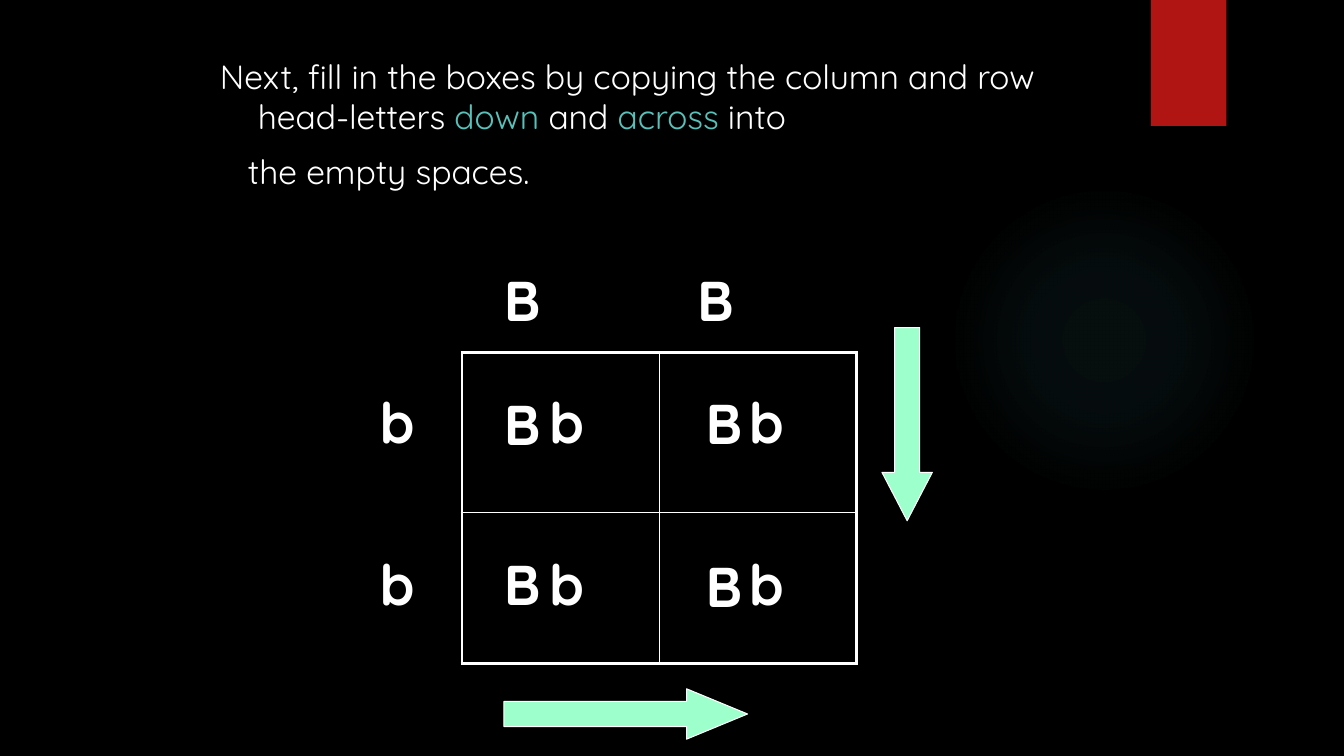
from lxml.etree import SubElement
from pptx import Presentation
from pptx.dml.color import RGBColor
from pptx.enum.shapes import MSO_SHAPE
from pptx.oxml import parse_xml
from pptx.oxml.ns import nsdecls, qn
from pptx.util import Pt

FONT = "Quicksand"
WHITE = "FFFFFF"
TEAL = "58C1BA"
MINT = "9DFFCB"
RED = "B01513"
GLOW = "50B9C1"
CAPITAL_TOPS = ((23, 22.3), (136.8, 138.2))


def color(value):
    return RGBColor.from_string(value)


def add_span(para, text, size, fill=WHITE, bold=False):
    span = para.add_run()
    span.text = text
    span.font.name = FONT
    span.font.size = Pt(size)
    span.font.bold = bold
    span.font.color.rgb = color(fill)


def add_box(page, left, top, width, height, inset=7.2):
    box = page.shapes.add_textbox(Pt(left), Pt(top), Pt(width), Pt(height))
    box.text_frame.word_wrap = True
    box.text_frame.margin_left = Pt(inset)
    return box.text_frame


def add_shape(page, kind, left, top, width, height, fill=None, line=None):
    shape = page.shapes.add_shape(kind, Pt(left), Pt(top), Pt(width), Pt(height))
    shape.shadow.inherit = False
    if fill:
        shape.fill.solid()
        shape.fill.fore_color.rgb = color(fill)
    if line:
        shape.line.color.rgb = color(line)
        shape.line.width = Pt(0.75)
    else:
        shape.line.fill.background()
    return shape


def add_glow(page, left, top, size):
    glow = add_shape(page, MSO_SHAPE.OVAL, left, top, size, size)
    glow.fill.background()
    stops = "".join(
        f'<a:gs pos="{place * 1000}"><a:srgbClr val="{GLOW}">'
        f'<a:alpha val="{alpha * 1000}"/></a:srgbClr></a:gs>'
        for place, alpha in ((0, 7), (36, 6), (69, 0))
    )
    gradient = parse_xml(
        f'<a:gradFill {nsdecls("a")}><a:gsLst>{stops}</a:gsLst><a:path path="circle">'
        '<a:fillToRect l="50000" t="50000" r="50000" b="50000"/></a:path></a:gradFill>'
    )
    properties = glow._element.spPr
    properties.replace(properties.find(qn("a:noFill")), gradient)


def add_instructions(page, left, top, width, height):
    frame = add_box(page, left, top, width, height)
    first = frame.paragraphs[0]
    first._p.get_or_add_pPr().set("marL", str(Pt(27)))
    first._p.get_or_add_pPr().set("indent", str(Pt(-27)))
    for text, fill in (
        ("Next, fill in the boxes by copying the column and row head-letters ", WHITE),
        ("down", TEAL),
        (" and ", WHITE),
        ("across", TEAL),
        (" into", WHITE),
    ):
        add_span(first, text, 24, fill)
    second = frame.add_paragraph()
    second._p.get_or_add_pPr().set("marL", str(Pt(20)))
    second.space_before = Pt(10)
    add_span(second, "the empty spaces.", 24)


def add_border(cell, side, width):
    line = SubElement(cell._tc.get_or_add_tcPr(), qn(f"a:{side}"), w=str(Pt(width)))
    SubElement(SubElement(line, qn("a:solidFill")), qn("a:srgbClr"), val=WHITE)


def add_grid(page, left, top, width, height):
    table = page.shapes.add_table(2, 2, Pt(left), Pt(top), Pt(width), Pt(height)).table
    table.first_row = table.horz_banding = False
    table.rows[0].height, table.rows[1].height = Pt(114.2), Pt(height - 114.2)
    for row in range(2):
        for column in range(2):
            cell = table.cell(row, column)
            outer = {
                "lnL": column == 0,
                "lnR": column == 1,
                "lnT": row == 0,
                "lnB": row == 1,
            }
            for side, thick in outer.items():
                add_border(cell, side, 2.25 if thick else 1)
            cell.fill.background()


def add_letter(page, letter, left, top, width, inset=7.2):
    frame = add_box(page, left, top, width, 55.4, inset)
    add_span(frame.paragraphs[0], letter, 40, bold=True)


def add_column_heads(page, left, top, width):
    frame = add_box(page, left, top, width, 55.4, 18)
    para = frame.paragraphs[0]
    tabs = SubElement(para._p.get_or_add_pPr(), qn("a:tabLst"))
    SubElement(tabs, qn("a:tab"), pos=str(Pt(138)), algn="l")
    for text in ("B", "\t", "B"):
        add_span(para, text, 40, bold=True)


def add_punnett_square(page, left, top, width, height):
    add_grid(page, left, top, width, height)
    add_column_heads(page, left + 12, top - 66, 270)
    for row, tops in enumerate(CAPITAL_TOPS):
        for column, offset in enumerate(tops):
            add_letter(page, "B", left + 12 + column * 144, top + offset, 66, 18)
    for offset in (-66, 55.2, 197.8):
        for row in range(2):
            add_letter(page, "b", left + offset, top + 21.6 + row * 115.2, 54)


def add_arrows(page, left, top, width, height):
    down = add_shape(page, MSO_SHAPE.DOWN_ARROW, left + width + 18, top - 18, 36, 138, MINT, WHITE)
    across = add_shape(page, MSO_SHAPE.RIGHT_ARROW, left + 30, top + height + 18, 174, 36, MINT, WHITE)
    down.adjustments[1] = 0.96
    across.adjustments[1] = 1.21


def main():
    deck = Presentation()
    deck.slide_width, deck.slide_height = Pt(960), Pt(540)
    page = deck.slides.add_slide(deck.slide_layouts[6])
    page.background.fill.solid()
    page.background.fill.fore_color.rgb = color("000000")
    add_glow(page, 677.5, 131.8, 221.8)
    add_shape(page, MSO_SHAPE.RECTANGLE, 822, 0, 54, 90, RED)
    add_instructions(page, 150, 36.3, 660, 450)
    square = (330, 252, 282, 222)
    add_punnett_square(page, *square)
    add_arrows(page, *square)
    deck.save("out.pptx")


if __name__ == "__main__":
    main()
